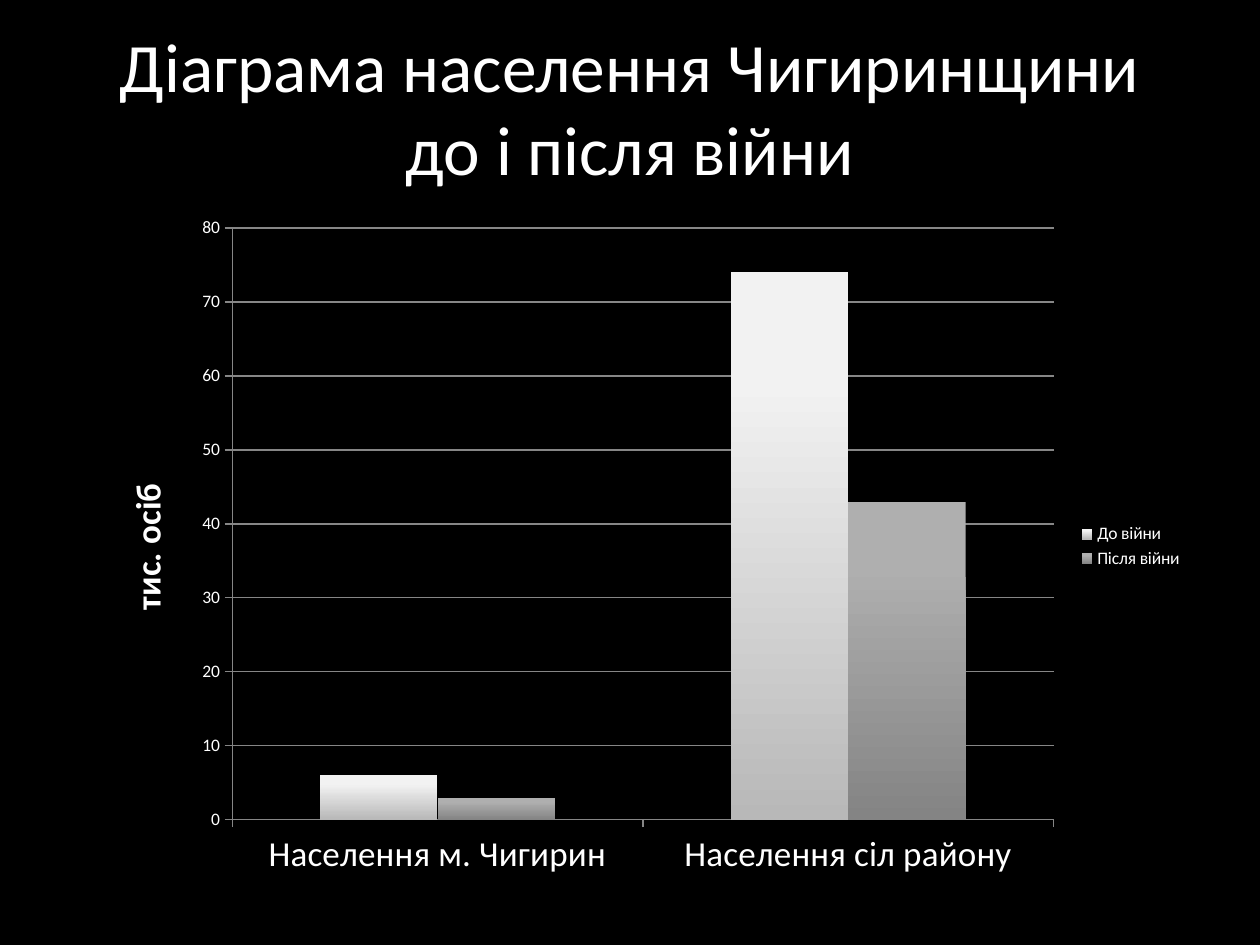
from pptx import Presentation
from pptx.chart.data import CategoryChartData
from pptx.dml.color import RGBColor
from pptx.enum.chart import XL_CHART_TYPE, XL_LEGEND_POSITION, XL_TICK_MARK
from pptx.enum.text import MSO_ANCHOR, PP_ALIGN
from pptx.oxml import parse_xml
from pptx.oxml.ns import nsdecls, qn
from pptx.util import Inches, Pt


def rgb(value):
    return RGBColor.from_string(value)


class Deck:
    """Holds the style and the current slide of a dark deck."""

    FONT, TEXT, BACK, GRID = "Calibri", "FFFFFF", "000000", "868686"

    def __init__(self, width, height):
        self.prs = Presentation()
        self.prs.slide_width, self.prs.slide_height = Inches(width), Inches(height)
        self.s = None

    def new_slide(self):
        self.s = self.prs.slides.add_slide(self.prs.slide_layouts[5])
        fill = self.s.background.fill
        fill.solid()
        fill.fore_color.rgb = rgb(self.BACK)

    def box(self, x, y, w, h):
        width, height = self.prs.slide_width, self.prs.slide_height
        return [int(v) for v in (x * width, y * height, w * width, h * height)]

    def style(self, font, size, bold=False):
        font.name, font.size, font.bold = self.FONT, Pt(size), bold
        font.color.rgb = rgb(self.TEXT)

    def title(self, text, share, size):
        sp = self.s.shapes.title
        sp.left, sp.top, sp.width, sp.height = self.box(*share)
        tf = sp.text_frame
        tf.text, tf.word_wrap = text, True
        tf.vertical_anchor = MSO_ANCHOR.MIDDLE
        p = tf.paragraphs[0]
        p.alignment = PP_ALIGN.CENTER
        self.style(p.font, size)

    def columns(self, share, cats, series, unit, plot_share):
        data = CategoryChartData()
        data.categories = cats
        for name, values, _ in series:
            data.add_series(name, values)
        kind = XL_CHART_TYPE.COLUMN_CLUSTERED
        chart = self.s.shapes.add_chart(kind, *self.box(*share), data).chart
        self.style(chart.font, 10)
        chart.has_title = False
        chart.has_legend = True
        chart.legend.position = XL_LEGEND_POSITION.RIGHT
        chart.legend.include_in_layout = False
        plot = chart.plots[0]
        plot.gap_width, plot.overlap, plot.vary_by_categories = 150, 0, False
        for ser, (_, _, colors) in zip(plot.series, series):
            self.gradient(ser.format.fill, colors)
        self.axes(chart, unit)
        self.place_plot(chart, plot_share)

    def gradient(self, fill, colors):
        fill.gradient()
        fill.gradient_angle = 270
        for stop, color, position in zip(fill.gradient_stops, colors, (0.2, 1)):
            stop.color.rgb, stop.position = rgb(color), position

    def axes(self, chart, unit):
        cat, val = chart.category_axis, chart.value_axis
        val.minimum_scale, val.maximum_scale, val.major_unit = 0, 80, 10
        val.has_major_gridlines = True
        for part in (cat, val, val.major_gridlines):
            part.format.line.color.rgb = rgb(self.GRID)
            part.format.line.width = Pt(0.75)
        for axis, size in ((cat, 20), (val, 10)):
            axis.major_tick_mark = XL_TICK_MARK.OUTSIDE
            self.style(axis.tick_labels.font, size)
        tf = val.axis_title.text_frame
        tf.text = unit
        self.style(tf.paragraphs[0].font, 20, True)
        body = next(val.axis_title._element.iter(qn("a:bodyPr")))
        body.set("rot", "-5400000")
        body.set("vert", "horz")

    def place_plot(self, chart, share):
        area = next(chart._chartSpace.iter(qn("c:plotArea")))
        for old in area.findall(qn("c:layout")):
            area.remove(old)
        parts = [("layoutTarget", "inner"), ("xMode", "edge"), ("yMode", "edge")]
        parts += zip("xywh", share)
        items = "".join(f'<c:{tag} val="{value}"/>' for tag, value in parts)
        area.insert(0, parse_xml(
            f'<c:layout {nsdecls("c")}><c:manualLayout>{items}</c:manualLayout></c:layout>'))

    def save(self):
        self.prs.save("out.pptx")


def main():
    deck = Deck(10, 7.5)
    deck.new_slide()
    deck.title("Діаграма населення Чигиринщини до і після війни",
               (0.067, 0.04, 0.866, 0.145), 39.6)
    deck.columns(
        (0.075, 0.216, 0.874, 0.724),
        ["Населення м. Чигирин", "Населення сіл району"],
        [("До війни", (6, 74), ("F2F2F2", "B8B8B8")),
         ("Після війни", (3, 43), ("AFAFAF", "848484"))],
        "тис. осіб", (0.125, 0.035, 0.746, 0.865))
    deck.save()


if __name__ == "__main__":
    main()
